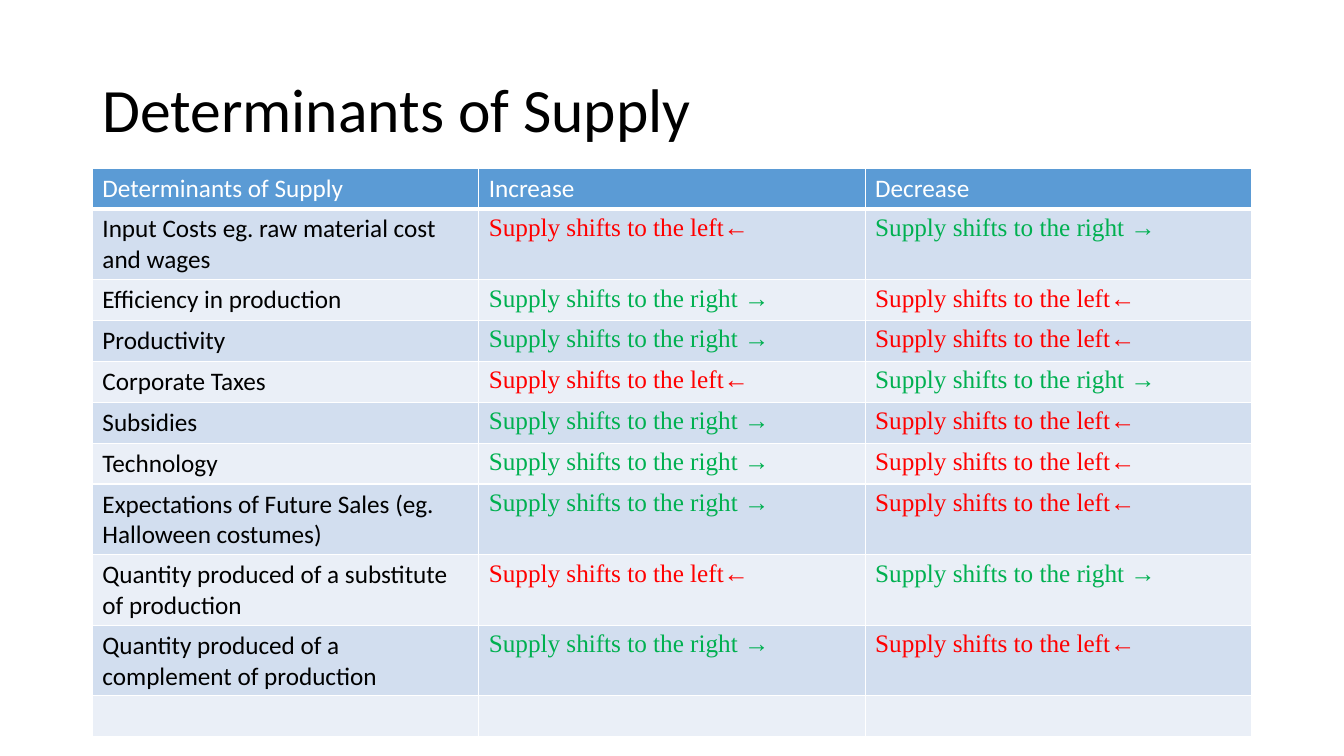
from typing import NamedTuple

from lxml.etree import SubElement
from pptx import Presentation
from pptx.dml.color import RGBColor
from pptx.enum.text import MSO_ANCHOR
from pptx.oxml.ns import qn
from pptx.util import Emu, Pt

SCALE = 9525
WHITE = RGBColor(0xFF, 0xFF, 0xFF)
BLACK = RGBColor(0x00, 0x00, 0x00)
BLUE = RGBColor(0x5B, 0x9B, 0xD5)
DARK = RGBColor(0xD2, 0xDE, 0xEF)
LIGHT = RGBColor(0xEA, 0xEF, 0xF7)
RED = RGBColor(0xFF, 0x00, 0x00)
GREEN = RGBColor(0x00, 0xB0, 0x50)
SANS = "Calibri"
SERIF = "Times New Roman"
TITLE = "Determinants of Supply"
HEADS = (TITLE, "Increase", "Decrease")
COL, ROW = 368, 39


class Shift(NamedTuple):
    text: str
    color: RGBColor


class Factor(NamedTuple):
    name: str
    more: Shift
    less: Shift


LEFT = Shift("Supply shifts to the left←", RED)
RIGHT = Shift("Supply shifts to the right →", GREEN)
FACTORS = (
    Factor("Input Costs eg. raw material cost and wages", LEFT, RIGHT),
    Factor("Efficiency in production", RIGHT, LEFT),
    Factor("Productivity", RIGHT, LEFT),
    Factor("Corporate Taxes", LEFT, RIGHT),
    Factor("Subsidies", RIGHT, LEFT),
    Factor("Technology", RIGHT, LEFT),
    Factor("Expectations of Future Sales (eg. Halloween costumes)", RIGHT, LEFT),
    Factor("Quantity produced of a substitute of production", LEFT, RIGHT),
    Factor("Quantity produced of a complement of production", RIGHT, LEFT),
)


def px(count: int) -> Emu:
    return Emu(count * SCALE)


def write(frame, text: str, *, size: int = 18, font: str = SANS,
          color: RGBColor = BLACK, space: float = 1.0) -> None:
    line = frame.paragraphs[0]
    line.line_spacing = space
    run = line.add_run()
    run.text = text
    run.font.size = Pt(size)
    run.font.name = font
    run.font.bold = False
    run.font.color.rgb = color


def paint(cell, fill: RGBColor, base: int = 1) -> None:
    props = cell._tc.get_or_add_tcPr()
    for side, width in (("L", 1), ("R", 1), ("T", 1), ("B", base)):
        edge = SubElement(props, qn(f"a:ln{side}"), w=str(Pt(width)))
        solid = SubElement(edge, qn("a:solidFill"))
        SubElement(solid, qn("a:srgbClr"), val=str(WHITE))
    cell.fill.solid()
    cell.fill.fore_color.rgb = fill


def add_title(slide) -> None:
    frame = slide.shapes.add_textbox(px(88), px(38), px(1104), px(139)).text_frame
    frame.word_wrap = True
    frame.vertical_anchor = MSO_ANCHOR.MIDDLE
    write(frame, TITLE, size=44, space=0.9)


def add_grid(slide) -> None:
    count = len(FACTORS) + 2
    grid = slide.shapes.add_table(count, len(HEADS), px(88), px(160),
                                  px(COL * len(HEADS)), px(ROW * count)).table
    for row in grid.rows:
        row.height = px(ROW)
    for col, head in enumerate(HEADS):
        cell = grid.cell(0, col)
        paint(cell, BLUE, base=3)
        write(cell.text_frame, head, color=WHITE)
        for row in range(1, count):
            paint(grid.cell(row, col), DARK if row % 2 else LIGHT)
    for row, factor in enumerate(FACTORS, 1):
        write(grid.cell(row, 0).text_frame, factor.name)
        for col, shift in enumerate((factor.more, factor.less), 1):
            write(grid.cell(row, col).text_frame, shift.text,
                  font=SERIF, color=shift.color)


def main() -> None:
    deck = Presentation()
    deck.slide_width, deck.slide_height = px(1280), px(720)
    slide = deck.slides.add_slide(deck.slide_layouts[6])
    add_title(slide)
    add_grid(slide)
    deck.save("out.pptx")


if __name__ == "__main__":
    main()
